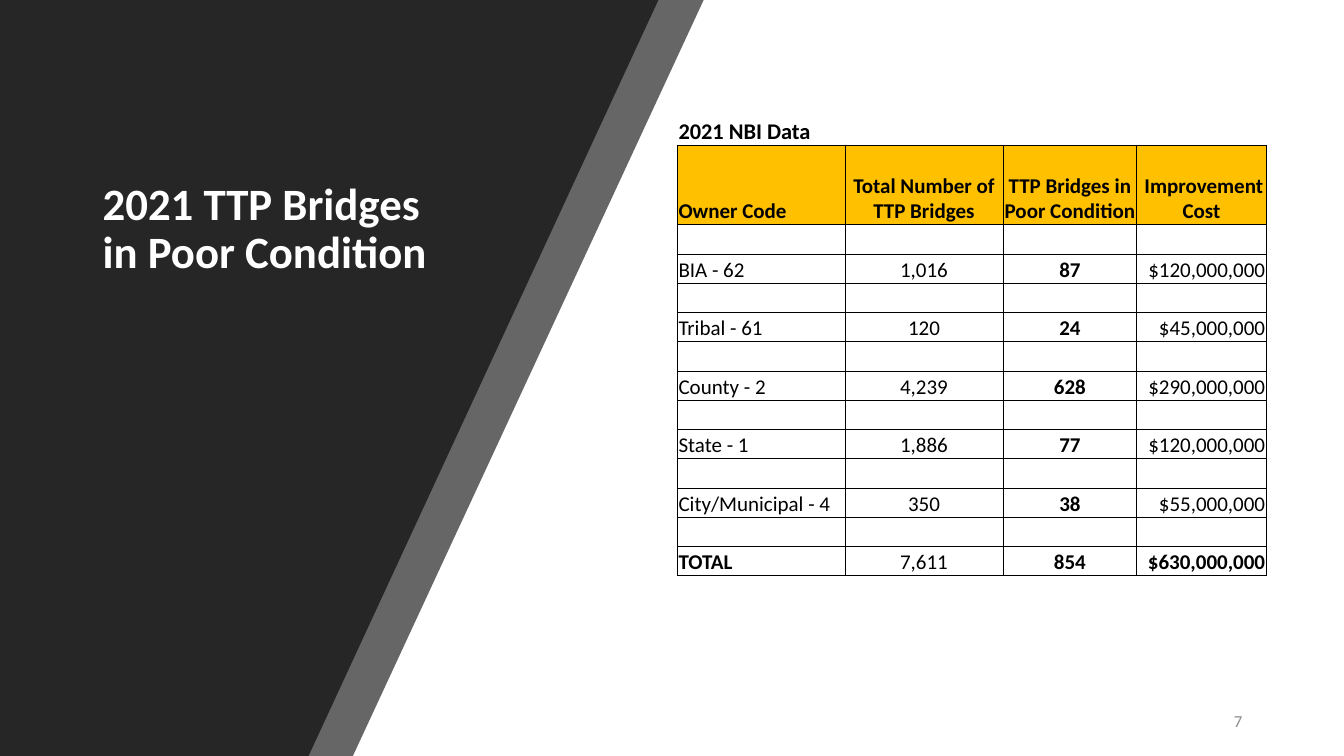
from lxml.etree import SubElement
from pptx import Presentation
from pptx.dml.color import RGBColor
from pptx.enum.text import MSO_ANCHOR, PP_ALIGN
from pptx.oxml.ns import qn
from pptx.util import Emu, Inches, Pt

THEME = {
    "font": "Calibri",
    "dark": "262626", "light": "FFFFFF", "ink": "000000",
    "header": "FFC000", "muted": "8C8C8C",
    "title": 32, "caption": 16, "body": 15, "number": 12,
}

prs = Presentation()
prs.slide_width, prs.slide_height = Inches(13.33), Inches(7.5)
s = prs.slides.add_slide(prs.slide_layouts[6])


def grid(x, y):
    """Turn percentages of the slide's width and height into lengths."""
    return Emu(int(prs.slide_width * x / 100)), Emu(int(prs.slide_height * y / 100))


def write(p, text, size, color, bold=False, align=PP_ALIGN.LEFT):
    p.alignment = align
    r = p.add_run()
    r.text = text
    r.font.name, r.font.size, r.font.bold = THEME["font"], Pt(THEME[size]), bold
    r.font.color.rgb = RGBColor.from_string(THEME[color])


# Slanted panels: the translucent band lies behind the solid one
for top_x, bottom_x, alpha in [(52.36, 26.26, 70), (48.99, 22.96, 100)]:
    builder = s.shapes.build_freeform(0, 0)
    builder.add_line_segments([grid(top_x, 0), grid(bottom_x, 100), grid(0, 100)])
    panel = builder.convert_to_shape()
    panel.shadow.inherit = False
    panel.line.fill.background()
    panel.fill.solid()
    panel.fill.fore_color.rgb = RGBColor.from_string(THEME["dark"])
    if alpha < 100:
        color = panel.fill._xPr.find(qn("a:solidFill"))[0]
        SubElement(color, qn("a:alpha"), val=str(alpha * 1000))

# Title and slide number
title = s.shapes.add_textbox(*grid(6.9, 6.4), *grid(26.86, 48))
number = s.shapes.add_textbox(*grid(70.67, 92.67), *grid(22.5, 5.33))
for box in (title, number):
    box.text_frame.word_wrap = True
    box.text_frame.vertical_anchor = MSO_ANCHOR.MIDDLE
p = title.text_frame.paragraphs[0]
p.line_spacing = 0.9
write(p, "2021 TTP Bridges in Poor Condition", "title", "light", bold=True)
p = number.text_frame.paragraphs[0]
p.space_after = Pt(6)
write(p, "7", "number", "muted", align=PP_ALIGN.RIGHT)

# Bridge table: caption, header, then an empty row before each owner
owners = [
    ("BIA - 62", "1,016", "87", "$120,000,000"),
    ("Tribal - 61", "120", "24", "$45,000,000"),
    ("County - 2", "4,239", "628", "$290,000,000"),
    ("State - 1", "1,886", "77", "$120,000,000"),
    ("City/Municipal - 4", "350", "38", "$55,000,000"),
    ("TOTAL", "7,611", "854", "$630,000,000"),
]
blank = ("",) * 4
rows = [
    ("2021 NBI Data", "", "", ""),
    ("Owner Code", "Total Number of\nTTP Bridges",
     "TTP Bridges in Poor Condition", " Improvement Cost"),
]
for owner in owners:
    rows += [blank, owner]
last = len(rows) - 1
col_widths = [12.45, 11.78, 9.94, 9.64]
row_heights = [4.27, 10.53] + [3.87] * (last - 1)
aligns = [PP_ALIGN.LEFT, PP_ALIGN.CENTER, PP_ALIGN.CENTER, PP_ALIGN.RIGHT]

tbl = s.shapes.add_table(len(rows), 4, *grid(50.41, 14.93),
                         *grid(sum(col_widths), sum(row_heights))).table
tbl.first_row = tbl.horz_banding = False
for column, width in zip(tbl.columns, col_widths):
    column.width = grid(width, 0)[0]
for row, height in zip(tbl.rows, row_heights):
    row.height = grid(0, height)[1]

for i, row in enumerate(rows):
    for j, text in enumerate(row):
        cell = tbl.cell(i, j)
        cell.vertical_anchor = MSO_ANCHOR.BOTTOM
        cell.margin_left = cell.margin_right = cell.margin_top = Inches(0.01)
        cell.margin_bottom = 0
        size = "caption" if i == 0 else "body"
        bold = i < 2 or j == 2 or (i == last and j != 1)
        align = PP_ALIGN.CENTER if i == 1 and j else aligns[j]
        for k, line in enumerate(text.split("\n")):
            p = cell.text_frame.add_paragraph() if k else cell.text_frame.paragraphs[0]
            if line:
                write(p, line, size, "ink", bold, align)
            else:
                SubElement(p._p, qn("a:endParaRPr"), sz=str(THEME[size] * 100))

        # Thick lines frame the table and its header; the caption has only a base line
        thick = {"L": j == 0, "R": j == 3, "T": i in (1, 2), "B": i in (0, 1, last)}
        for side, is_thick in thick.items():
            ln = SubElement(cell._tc.get_or_add_tcPr(), qn(f"a:ln{side}"),
                            w=str(Pt(1 if is_thick else 0.5)))
            if i == 0 and side != "B":
                SubElement(ln, qn("a:noFill"))
            else:
                fill = SubElement(ln, qn("a:solidFill"))
                SubElement(fill, qn("a:srgbClr"), val=THEME["ink"])
        if i == 1:
            cell.fill.solid()
            cell.fill.fore_color.rgb = RGBColor.from_string(THEME["header"])
        else:
            cell.fill.background()

prs.save("out.pptx")
